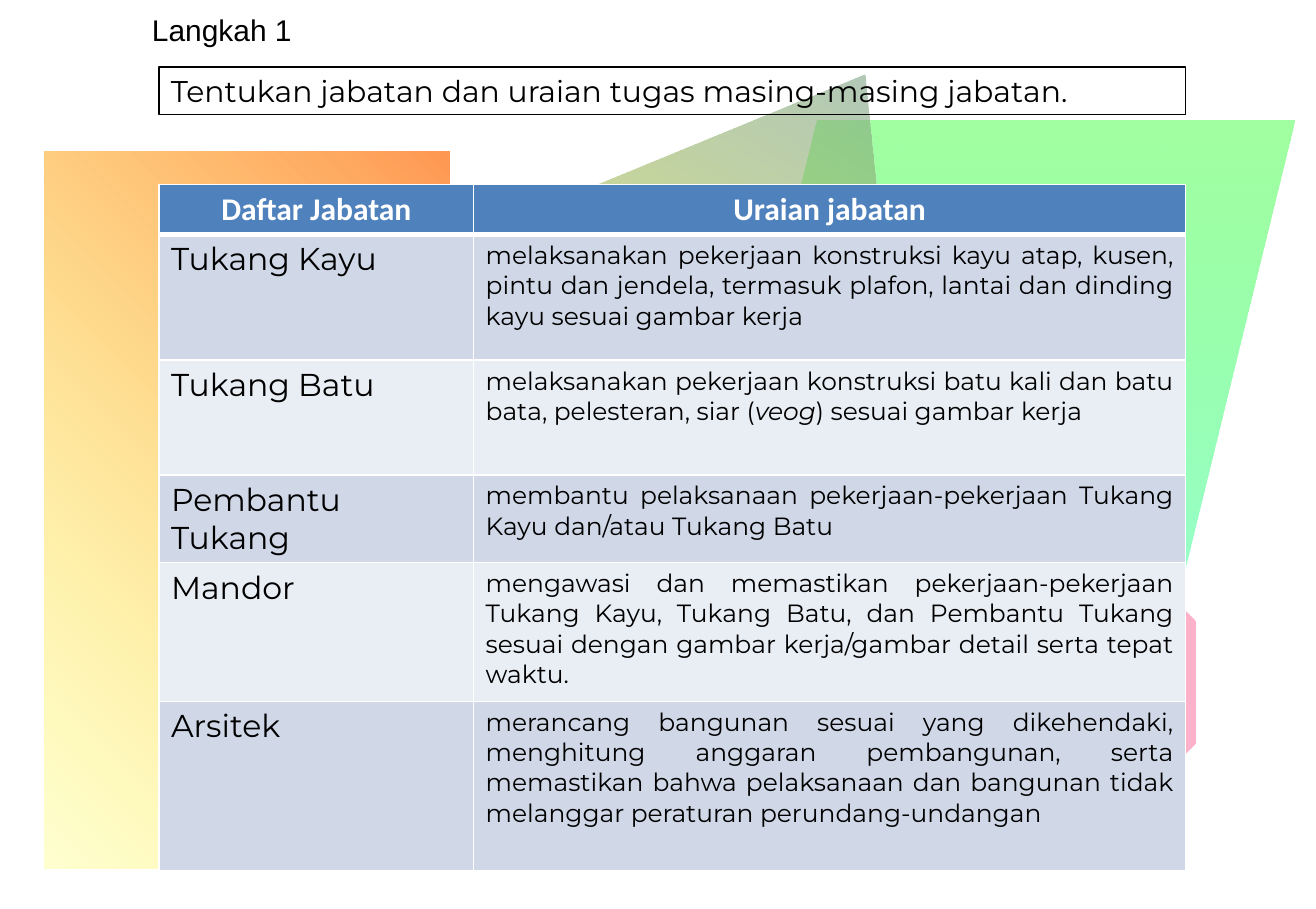
from lxml.etree import SubElement
from pptx import Presentation
from pptx.dml.color import RGBColor
from pptx.enum.shapes import MSO_SHAPE as SHAPE
from pptx.enum.text import MSO_ANCHOR as ANCHOR, MSO_AUTO_SIZE as AUTO, PP_ALIGN as ALIGN
from pptx.oxml.ns import qn
from pptx.util import Inches, Pt

COLORS = {
    "black": "000000", "white": "FFFFFF", "header": "4F81BD",
    "band_dark": "D0D8E8", "band_light": "E9EDF4",
    "green": "00FF00", "cyan": "66FFFF", "yellow": "FFFF00",
    "orange": "FF6600", "pink": "FF6699",
}
TITLE = "Langkah 1"
INTRO = "Tentukan jabatan dan uraian tugas masing-masing jabatan."
HEADERS = ["Daftar Jabatan", "Uraian jabatan"]
JOBS = [
    ("Tukang Kayu", ["melaksanakan pekerjaan konstruksi kayu atap, kusen, pintu dan jendela, "
                     "termasuk plafon, lantai dan dinding kayu sesuai gambar kerja"]),
    ("Tukang Batu", ["melaksanakan pekerjaan konstruksi batu kali dan batu bata, pelesteran, siar (",
                     ("veog", True), ") sesuai gambar kerja"]),
    ("Pembantu Tukang", ["membantu pelaksanaan pekerjaan-pekerjaan Tukang Kayu dan/atau Tukang Batu"]),
    ("Mandor", ["mengawasi dan memastikan pekerjaan-pekerjaan Tukang Kayu, Tukang Batu, dan "
                "Pembantu Tukang sesuai dengan gambar kerja/gambar detail serta tepat waktu."]),
    ("Arsitek", ["merancang bangunan sesuai yang dikehendaki, menghitung anggaran pembangunan, "
                 "serta memastikan bahwa pelaksanaan dan bangunan tidak melanggar peraturan "
                 "perundang-undangan"]),
]
LEFT, WIDTH = 1.33, 8.58
COL_WIDTHS = [2.63, 5.95]
ROW_HEIGHTS = [0.42, 1.05, 0.96, 0.73, 1.16, 1.42]
# shape, box, rotation, adjustment, gradient angle, (color, opacity) stops
BACKDROP = [
    (SHAPE.PARALLELOGRAM, (5.32, 1.01, 5.5, 6.16), 0, 0.274, 270, [("green", 37), ("cyan", 65)]),
    (SHAPE.ISOSCELES_TRIANGLE, (3.16, 0.34, 6.05, 4.05), 30.9, 0.5, 270, [("header", 60), ("yellow", 70)]),
    (SHAPE.RECTANGLE, (0.37, 1.27, 3.39, 5.99), 0, None, 45, [("yellow", 19), ("orange", 68)]),
    (SHAPE.OCTAGON, (5.1, 2.03, 2.45, 7.34), 90, 0.293, 270, [("pink", 51), ("green", 68)]),
]


def rgb(name):
    return RGBColor.from_string(COLORS[name])


def write(tf, runs, size, font="Montserrat", color="black", align=ALIGN.LEFT, bold=False):
    p = tf.paragraphs[0]
    p.alignment = align
    for run in runs:
        text, italic = run if isinstance(run, tuple) else (run, False)
        r = p.add_run()
        r.text = text
        r.font.size, r.font.name = Pt(size), font
        r.font.bold, r.font.italic = bold, italic
        r.font.color.rgb = rgb(color)


def place(sp, *box):
    sp.left, sp.top, sp.width, sp.height = map(Inches, box)


def add_backdrop(s, kind, box, rotation, adjustment, angle, stops):
    sp = s.shapes.add_shape(kind, *map(Inches, box))
    sp.rotation = rotation
    sp.shadow.inherit = False
    sp.line.fill.background()
    if adjustment is not None:
        sp.adjustments[0] = adjustment
    sp.fill.gradient()
    sp.fill.gradient_angle = angle
    for stop, (color, _) in zip(sp.fill.gradient_stops, stops):
        stop.color.rgb = rgb(color)
    for clr, (_, opacity) in zip(sp._element.spPr.iter(qn("a:srgbClr")), stops):
        SubElement(clr, qn("a:alpha"), val=str(opacity * 1000))


def style_cell(cell, fill, top, bottom):
    tcPr = cell._tc.get_or_add_tcPr()
    for side, width in (("L", 1), ("R", 1), ("T", top), ("B", bottom)):
        ln = SubElement(tcPr, qn(f"a:ln{side}"), w=str(Pt(width)))
        SubElement(SubElement(ln, qn("a:solidFill")), qn("a:srgbClr"), val=COLORS["white"])
    cell.fill.solid()
    cell.fill.fore_color.rgb = rgb(fill)


def add_job_table(s):
    box = (LEFT, 1.54, WIDTH, sum(ROW_HEIGHTS))
    table = s.shapes.add_table(len(ROW_HEIGHTS), len(COL_WIDTHS), *map(Inches, box)).table
    for col, width in zip(table.columns, COL_WIDTHS):
        col.width = Inches(width)
    for row, height in zip(table.rows, ROW_HEIGHTS):
        row.height = Inches(height)
    for cell, text in zip(table.rows[0].cells, HEADERS):
        style_cell(cell, "header", 1, 3)
        write(cell.text_frame, [text], 19, "Calibri", "white", ALIGN.CENTER, True)
    for i, (job, duties) in enumerate(JOBS, 1):
        name, duty = table.rows[i].cells
        for cell in (name, duty):
            style_cell(cell, "band_dark" if i % 2 else "band_light", 3 if i == 1 else 1, 1)
        write(name.text_frame, [job], 19)
        write(duty.text_frame, duties, 15, align=ALIGN.JUSTIFY)


def main():
    """Build the job list slide."""
    prs = Presentation()
    prs.slide_width, prs.slide_height = Inches(11), Inches(7.6)
    s = prs.slides.add_slide(prs.slide_layouts[5])
    for item in BACKDROP:
        add_backdrop(s, *item)
    add_job_table(s)

    intro = s.shapes.add_textbox(*map(Inches, (LEFT, 0.56, WIDTH, 0.4)))
    intro.line.color.rgb = rgb("black")
    intro.line.width = Pt(0.75)
    intro.text_frame.word_wrap = True
    intro.text_frame.auto_size = AUTO.SHAPE_TO_FIT_TEXT
    write(intro.text_frame, [INTRO], 18)

    title = s.shapes.title
    place(title, 1.17, 0.05, 1.38, 0.4)
    tf = title.text_frame
    tf.word_wrap, tf.auto_size, tf.vertical_anchor = False, AUTO.SHAPE_TO_FIT_TEXT, ANCHOR.TOP
    write(tf, [TITLE], 18, "Arial")
    prs.save("out.pptx")


if __name__ == "__main__":
    main()
